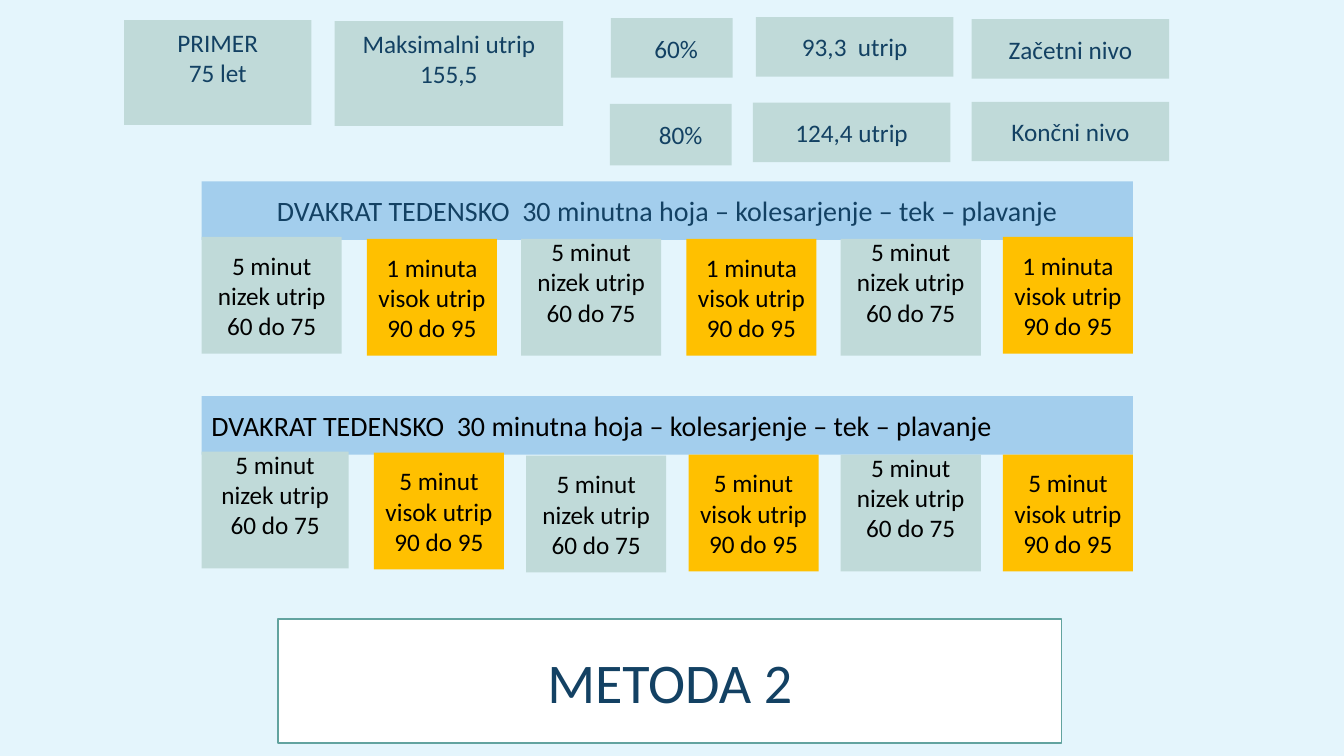
"""Build the interval training slide METODA 2."""
from pptx import Presentation
from pptx.dml.color import RGBColor
from pptx.enum.shapes import MSO_SHAPE as Shape
from pptx.enum.text import MSO_ANCHOR as Anchor, PP_ALIGN as Align
from pptx.util import Pt

NAVY, BLACK, WHITE = "134163", "000000", "FFFFFF"
SAGE, AMBER, SKY, TEAL, PALE = "C0DAD9", "FFC000", "A3CEED", "62A39F", "E4F5FC"
INSET_X, INSET_Y, TEXT_LINE = 7.2, 3.6, 22

TITLE = "METODA 2"
TITLE_BOX = (198.7, 442.1, 559.4, 88.6)
WEEKLY = "DVAKRAT TEDENSKO  30 minutna hoja – kolesarjenje – tek – plavanje"

EXAMPLE = [
    (["PRIMER", "75 let"], (88.6, 14.4, 133.9, 74.9), {"lift": TEXT_LINE}),
    (["Maksimalni utrip 155,5"], (239, 15.1, 163.4, 74.9), {"lift": TEXT_LINE}),
    (["60%"], (436.3, 13, 87.1, 42.5), {"indent": 6}),
    (["80%"], (435.6, 74.2, 87.1, 43.9), {"indent": 14}),
    (["93,3  utrip"], (540, 12.2, 141.1, 42.5), {}),
    (["124,4 utrip"], (537.8, 73.4, 141.1, 42.5), {}),
    (["Začetni nivo"], (694.1, 13.7, 141.1, 42.5), {}),
    (["Končni nivo"], (694.1, 72.7, 141.1, 42.5), {}),
]

LOW = ["5 minut", "nizek utrip", "60 do 75"]
HIGH_PULSE = "visok utrip 90 do 95"
LOW_WIDTH, HIGH_WIDTH, INTERVAL_HEIGHT = 100.1, 92.9, 83.5
HEADER_LEFT, HEADER_WIDTH, HEADER_HEIGHT = 144, 665.3, 41.8

PLANS = [
    {"top": 129.6, "format": {"color": NAVY, "align": Align.CENTER},
     "high": "1 minuta", "raised": {2, 4}, "first_width": LOW_WIDTH,
     "places": [(144, 169.2), (262.1, 170.6), (372.2, 170.6),
                (490.3, 170.6), (600.5, 170.6), (716.4, 169.2)]},
    {"top": 283, "format": {"color": BLACK, "align": Align.LEFT},
     "high": "5 minut", "raised": {0, 4}, "first_width": 105.1,
     "places": [(144, 322.6), (267.1, 323.3), (375.8, 325.4),
                (491.8, 324.7), (600.5, 324.7), (716.4, 324.7)]},
]


def rgb(hex_color):
    return RGBColor.from_string(hex_color)


def write(box, lines, size=18, color=BLACK, align=Align.CENTER, lift=0, indent=0):
    frame = box.text_frame
    frame.word_wrap = True
    frame.vertical_anchor = Anchor.MIDDLE
    frame.margin_left, frame.margin_right = Pt(INSET_X + indent), Pt(INSET_X)
    frame.margin_top, frame.margin_bottom = Pt(INSET_Y), Pt(INSET_Y + lift)
    for index, line in enumerate(lines):
        paragraph = frame.paragraphs[0] if index == 0 else frame.add_paragraph()
        paragraph.alignment = align
        run = paragraph.add_run()
        run.text = line
        run.font.name, run.font.size = "Calibri", Pt(size)
        run.font.color.rgb = rgb(color)


def paint(box, fill):
    box.fill.solid()
    box.fill.fore_color.rgb = rgb(fill)


def add_panel(slide, place, fill, lines, **text_format):
    panel = slide.shapes.add_shape(Shape.RECTANGLE, *map(Pt, place))
    panel.shadow.inherit = False
    paint(panel, fill)
    panel.line.fill.background()
    write(panel, lines, **text_format)


def add_plan(slide, plan):
    header_place = (HEADER_LEFT, plan["top"], HEADER_WIDTH, HEADER_HEIGHT)
    add_panel(slide, header_place, SKY, [WEEKLY], size=20, **plan["format"])
    for index, (left, top) in enumerate(plan["places"]):
        if index % 2:
            width, fill, lines = HIGH_WIDTH, AMBER, [plan["high"], HIGH_PULSE]
        else:
            width = LOW_WIDTH if index else plan["first_width"]
            fill, lines = SAGE, LOW
        lift = TEXT_LINE if index in plan["raised"] else 0
        add_panel(slide, (left, top, width, INTERVAL_HEIGHT), fill, lines, lift=lift)


def main():
    deck = Presentation()
    deck.slide_width, deck.slide_height = Pt(960), Pt(540)
    slide = deck.slides.add_slide(deck.slide_layouts[5])
    paint(slide.background, PALE)

    title = slide.shapes.title
    title.left, title.top, title.width, title.height = map(Pt, TITLE_BOX)
    paint(title, WHITE)
    title.line.color.rgb = rgb(TEAL)
    title.line.width = Pt(1)
    write(title, [TITLE], size=40, color=NAVY)

    for lines, place, shift in EXAMPLE:
        add_panel(slide, place, SAGE, lines, color=NAVY, **shift)
    for plan in PLANS:
        add_plan(slide, plan)
    deck.save("out.pptx")


if __name__ == "__main__":
    main()
